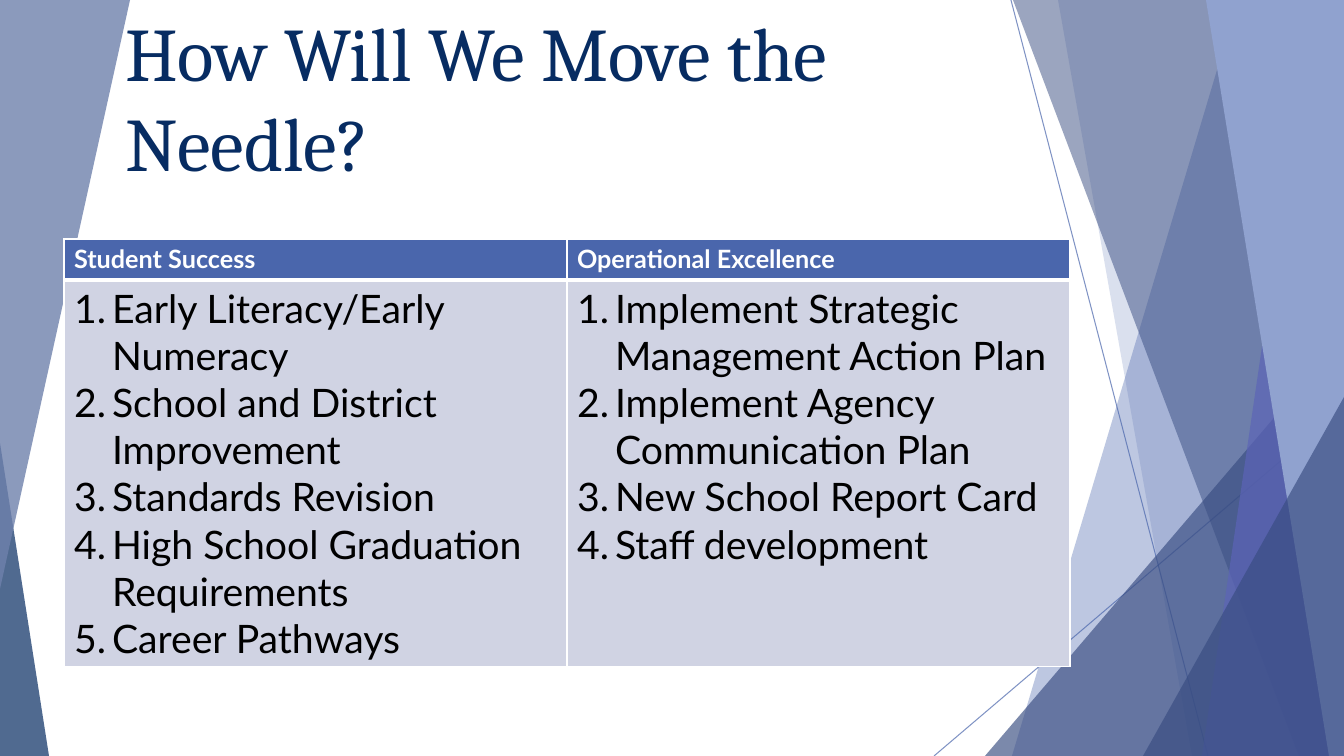
"""Builds the slide about the two priority lists, with its faceted backdrop."""
from lxml.etree import SubElement
from pptx import Presentation
from pptx.dml.color import RGBColor
from pptx.enum.shapes import MSO_CONNECTOR as Connector, MSO_SHAPE as Shape
from pptx.enum.text import MSO_ANCHOR as Anchor, MSO_AUTO_SIZE as AutoSize, PP_ALIGN as Align
from pptx.oxml import parse_xml
from pptx.oxml.ns import nsdecls, qn
from pptx.util import Emu, Pt

PX = 914400 / 100.8
WIDTH, HEIGHT = 1344, 756

WHITE = RGBColor(0xFF, 0xFF, 0xFF)
BLACK = RGBColor(0, 0, 0)
BLUE = RGBColor(0x4A, 0x66, 0xAC)
DEEP_BLUE = RGBColor(0x38, 0x4C, 0x81)
VIOLET = RGBColor(0x5C, 0x64, 0xB7)
LIGHT_BLUE = RGBColor(0x90, 0xA2, 0xCF)
GREY_BLUE = RGBColor(0x6F, 0x81, 0xAC)
NAVY = RGBColor(0x07, 0x2C, 0x62)
PALE = RGBColor(0xD0, 0xD3, 0xE3)

TITLE_FONT = {"name": "Cambria", "size": Pt(54)}
HEADER_FONT = {"name": "Lato", "size": Pt(18), "bold": True}
ITEM_FONT = {"name": "Lato", "size": Pt(28), "bold": False}

PRIORITIES = {
    "Student Success": [
        "Early Literacy/Early Numeracy",
        "School and District Improvement",
        "Standards Revision",
        "High School Graduation Requirements",
        "Career Pathways",
    ],
    "Operational Excellence": [
        "Implement Strategic Management Action Plan",
        "Implement Agency Communication Plan",
        "New School Report Card",
        "Staff development",
    ],
}


def px(length):
    """Turn a length in px into EMU."""
    return Emu(round(length * PX))


def set_font(font, values, color):
    """Apply format values and a colour to a font."""
    for name, value in values.items():
        setattr(font, name, value)
    font.color.rgb = color


def set_opacity(fill_parent, percent):
    """Make the solid colour inside an element partly transparent."""
    color = next(fill_parent.iter(qn("a:srgbClr")))
    SubElement(color, qn("a:alpha"), val=str(percent * 1000))


def paint(shape, color, opacity):
    """Fill a shape without outline or shadow."""
    shape.shadow.inherit = False
    shape.line.fill.background()
    shape.fill.solid()
    shape.fill.fore_color.rgb = color
    set_opacity(shape.element.spPr, opacity)


def add_ray(page, start, end):
    """Draw one thin half-transparent line."""
    ray = page.shapes.add_connector(Connector.STRAIGHT, *map(px, start + end))
    ray.line.color.rgb = BLUE
    ray.line.width = Pt(0.75)
    set_opacity(ray.line._get_or_add_ln(), 70)
    SubElement(ray.element.spPr, qn("a:effectLst"))


def add_facet(page, top, bottom, color, opacity):
    """Draw a facet from a slanted left edge to the right slide edge."""
    builder = page.shapes.build_freeform(top, 0, scale=PX)
    builder.add_line_segments([(WIDTH, 0), (WIDTH, HEIGHT), (bottom, HEIGHT)], close=True)
    paint(builder.convert_to_shape(), color, opacity)


def add_corner(page, box, apex, color, opacity, rotation=0):
    """Draw a right-angled triangle with its apex at the given share of its width."""
    corner = page.shapes.add_shape(Shape.ISOSCELES_TRIANGLE, *map(px, box))
    corner.adjustments[0] = apex
    corner.rotation = rotation
    paint(corner, color, opacity)


def add_backdrop(page):
    """Draw the facets on both sides from back to front."""
    add_ray(page, (1011, 0), (1208, HEIGHT))
    add_ray(page, (WIDTH, 407), (934, HEIGHT))
    add_facet(page, 1238, 1012, BLUE, 36)
    add_facet(page, 1058, 1192, BLUE, 20)
    add_corner(page, (985, 336, 359, 420), 1, DEEP_BLUE, 66)
    add_facet(page, 1013, 1299, DEEP_BLUE, 50)
    add_facet(page, 1313, 1202, VIOLET, 70)
    add_facet(page, 1206, 1329, LIGHT_BLUE, 100)
    add_corner(page, (1143, 397, 201, 359), 1, DEEP_BLUE, 66)
    add_corner(page, (0, 443, 49, 313), 0, NAVY, 70)
    add_corner(page, (0, 0, 130, 589), 1, GREY_BLUE, 80, rotation=180)


def add_title(page, box, text):
    """Place the title placeholder in front of the backdrop."""
    title = page.shapes.title
    title.left, title.top, title.width, title.height = map(px, box)
    frame = title.text_frame
    frame.text = text
    frame.word_wrap = True
    frame.auto_size = AutoSize.NONE
    frame.vertical_anchor = Anchor.BOTTOM
    para = frame.paragraphs[0]
    para.alignment = Align.LEFT
    set_font(para.runs[0].font, TITLE_FONT, NAVY)
    title.element.getparent().append(title.element)


def style_cell(cell, color, bottom_width):
    """Fill a cell and give it white borders."""
    cell.fill.solid()
    cell.fill.fore_color.rgb = color
    borders = {"lnL": 1, "lnR": 1, "lnT": 1, "lnB": bottom_width}
    for index, (side, width) in enumerate(borders.items()):
        border = parse_xml(
            f'<a:{side} {nsdecls("a")} w="{Pt(width)}"><a:solidFill>'
            f'<a:srgbClr val="{WHITE}"/></a:solidFill></a:{side}>')
        cell._tc.get_or_add_tcPr().insert(index, border)


def number_para(para, indent):
    """Give a paragraph automatic numbering with a hanging indent."""
    props = para._p.get_or_add_pPr()
    props.set("marL", str(indent))
    props.set("indent", str(-indent))
    SubElement(props, qn("a:buFont"), typeface="+mj-lt")
    SubElement(props, qn("a:buAutoNum"), type="arabicPeriod")


def add_priorities(page, box, header_height):
    """Place the table with one numbered list under each heading."""
    left, top, width, height = box
    table = page.shapes.add_table(2, len(PRIORITIES), *map(px, box)).table
    table.first_row = table.horz_banding = False
    table.rows[0].height = px(header_height)
    table.rows[1].height = px(height - header_height)
    for column, (heading, items) in enumerate(PRIORITIES.items()):
        table.columns[column].width = px(width / len(PRIORITIES))
        header, body = table.cell(0, column), table.cell(1, column)
        style_cell(header, BLUE, 3)
        style_cell(body, PALE, 1)
        header.text = heading
        set_font(header.text_frame.paragraphs[0].runs[0].font, HEADER_FONT, WHITE)
        body.text = "\n".join(items)
        for para in body.text_frame.paragraphs:
            number_para(para, px(38))
            set_font(para.runs[0].font, ITEM_FONT, BLACK)


def main():
    """Build and save the deck."""
    deck = Presentation()
    deck.slide_width, deck.slide_height = px(WIDTH), px(HEIGHT)
    page = deck.slides.add_slide(deck.slide_layouts.get_by_name("Title Only"))
    add_backdrop(page)
    add_title(page, (115, 11, 956, 181), "How Will We Move the Needle?")
    add_priorities(page, (64, 239, 1006, 427), 41)
    deck.save("out.pptx")


if __name__ == "__main__":
    main()
